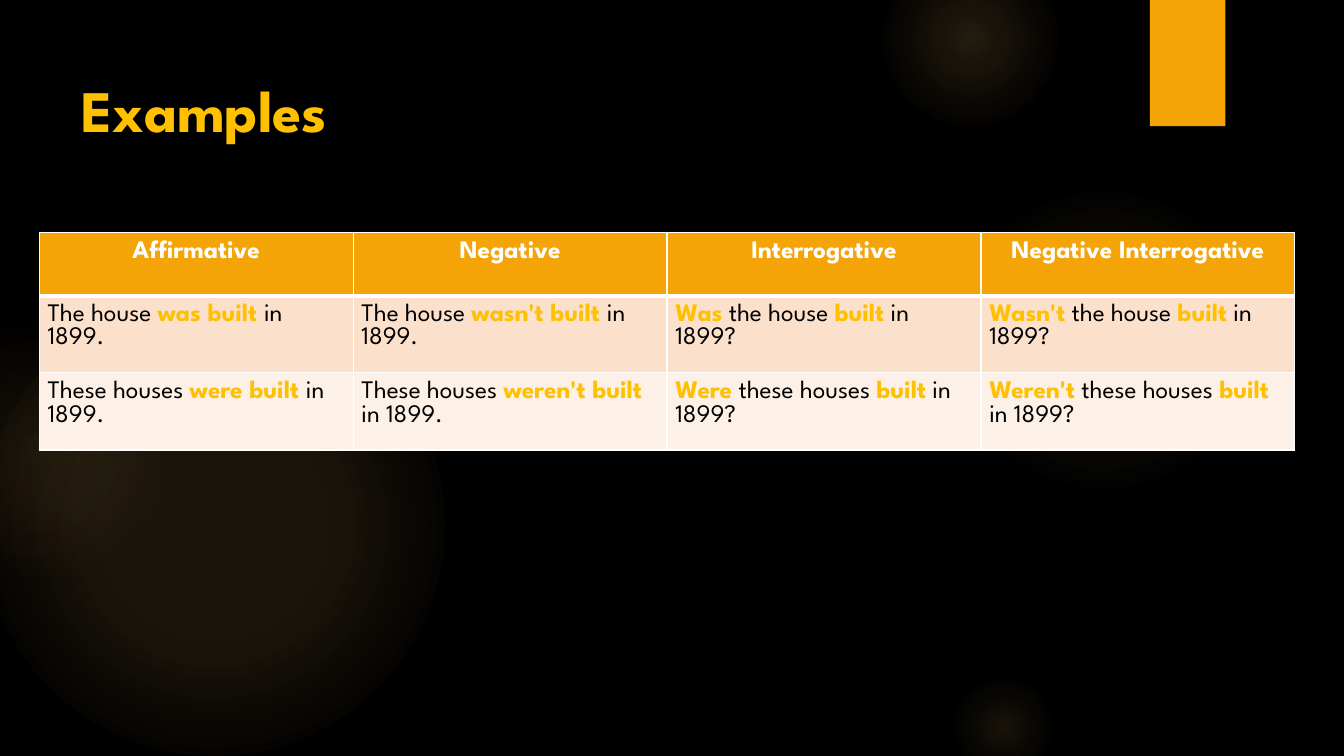
from dataclasses import dataclass

from lxml import etree
from pptx import Presentation
from pptx.dml.color import RGBColor
from pptx.enum import shapes, text
from pptx.oxml import ns
from pptx.util import Cm, Pt


@dataclass(frozen=True)
class Theme:
    font: str = "League Spartan"
    back: str = "000000"
    ink: str = "000000"
    white: str = "FFFFFF"
    gold: str = "FFC000"
    tag: str = "F5A408"
    glow: str = "FAC96A"
    rose: str = "F59B74"
    bands: tuple = ("FBE0CC", "FDF0E7")
    title: int = 42
    body: int = 18


T = Theme()

# Left, top, size in cm, then gradient stops: place %, colour, opacity %
GLOWS = [
    (-0.43, 7.42, 11.63, [(0, T.glow, 11), (36, T.glow, 10), (75, T.glow, 0)]),
    (-2.34, 8.05, 6.55, [(0, T.glow, 8), (36, T.glow, 5), (71, T.rose, 0)]),
    (23.9, 4.65, 7.82, [(0, T.glow, 7), (36, T.glow, 6), (69, T.glow, 0)]),
    (22.23, -1.27, 4.45, [(0, T.glow, 14), (36, T.glow, 7), (73, T.glow, 0)]),
    (23.9, 16.94, 2.74, [(0, T.glow, 10), (31, T.glow, 5), (66, T.glow, 0)]),
]

# Asterisks enclose the highlighted verb forms
HEADS = ["Affirmative", "Negative", "Interrogative", "Negative Interrogative"]
ROWS = [
    ["The house *was built *in 1899.", "The house *wasn't built *in 1899.",
     "*Was* the house *built* in 1899?", "*Wasn't* the house *built* in 1899?"],
    ["These houses *were built *in 1899.", "These houses *weren't built* in 1899.",
     "*Were* these houses *built* in 1899?", "*Weren't* these houses *built *in 1899?"],
]


def rgb(code):
    return RGBColor.from_string(code)


def node(up, tag, **attrs):
    item = etree.SubElement(up, ns.qn(tag))
    for name, value in attrs.items():
        item.set(name, str(value))
    return item


def write(frame, words, size=T.body, color=T.ink, bold=False, align=None):
    para = frame.paragraphs[0]
    para.alignment = align
    for i, part in enumerate(words.split("*")):
        if not part:
            continue
        mark = i % 2 == 1
        run = para.add_run()
        run.text = part
        run.font.name = T.font
        run.font.size = Pt(size)
        run.font.bold = bold or mark
        run.font.color.rgb = rgb(T.gold if mark else color)


def shape(slide, kind, left, top, width, height):
    item = slide.shapes.add_shape(kind, Cm(left), Cm(top), Cm(width), Cm(height))
    item.shadow.inherit = False
    item.line.fill.background()
    return item


def glow(slide, left, top, size, stops):
    disc = shape(slide, shapes.MSO_SHAPE.OVAL, left, top, size, size)
    disc.fill.gradient()
    grad = disc.element.spPr.find(ns.qn("a:gradFill"))
    for child in list(grad):
        grad.remove(child)
    chain = node(grad, "a:gsLst")
    for place, color, alpha in stops:
        stop = node(chain, "a:gs", pos=place * 1000)
        node(node(stop, "a:srgbClr", val=color), "a:alpha", val=alpha * 1000)
    ring = node(grad, "a:path", path="circle")
    node(ring, "a:fillToRect", l=50000, t=50000, r=50000, b=50000)


def title(slide, words):
    box = slide.shapes.add_textbox(Cm(1.8), Cm(1.27), Cm(26.14), Cm(3.89))
    frame = box.text_frame
    frame.word_wrap = True
    frame.vertical_anchor = text.MSO_ANCHOR.TOP
    frame.margin_top = Cm(0.58)
    write(frame, words, size=T.title, color=T.gold, bold=True)


def border(cell, **widths):
    props = cell._tc.get_or_add_tcPr()
    for side in "LRTB":
        line = node(props, f"a:ln{side}", w=Pt(widths.get(side, 1)))
        node(node(line, "a:solidFill"), "a:srgbClr", val=T.white)


def fill(cell, words, tint, edges, **form):
    cell.margin_left = cell.margin_right = Cm(0.21)
    cell.margin_top = cell.margin_bottom = Cm(0.21)
    border(cell, **edges)
    cell.fill.solid()
    cell.fill.fore_color.rgb = rgb(tint)
    write(cell.text_frame, words, **form)


def grid(slide, left, top, wide, high):
    count, cols = len(ROWS) + 1, len(HEADS)
    table = slide.shapes.add_table(count, cols, Cm(left), Cm(top),
                                   Cm(wide * cols), Cm(high * count)).table
    table.horz_banding = False
    for col in table.columns:
        col.width = Cm(wide)
    for row in table.rows:
        row.height = Cm(high)
    for c, head in enumerate(HEADS):
        fill(table.cell(0, c), head, T.tag, {"B": 3}, color=T.white,
             bold=True, align=text.PP_ALIGN.CENTER)
    for r, (line, band) in enumerate(zip(ROWS, T.bands), 1):
        edges = {"T": 3} if r == 1 else {}
        for c, words in enumerate(line):
            fill(table.cell(r, c), words, band, edges)


def main():
    deck = Presentation()
    deck.slide_width, deck.slide_height = Cm(33.87), Cm(19.05)
    slide = deck.slides.add_slide(deck.slide_layouts[6])

    # Backdrop
    slide.background.fill.solid()
    slide.background.fill.fore_color.rgb = rgb(T.back)
    for spot in GLOWS:
        glow(slide, *spot)
    tag = shape(slide, shapes.MSO_SHAPE.RECTANGLE, 28.98, 0, 1.9, 3.18)
    tag.fill.solid()
    tag.fill.fore_color.rgb = rgb(T.tag)

    # Content
    title(slide, "Examples")
    grid(slide, 0.99, 5.85, 7.91, 1.6)
    deck.save("out.pptx")


if __name__ == "__main__":
    main()
